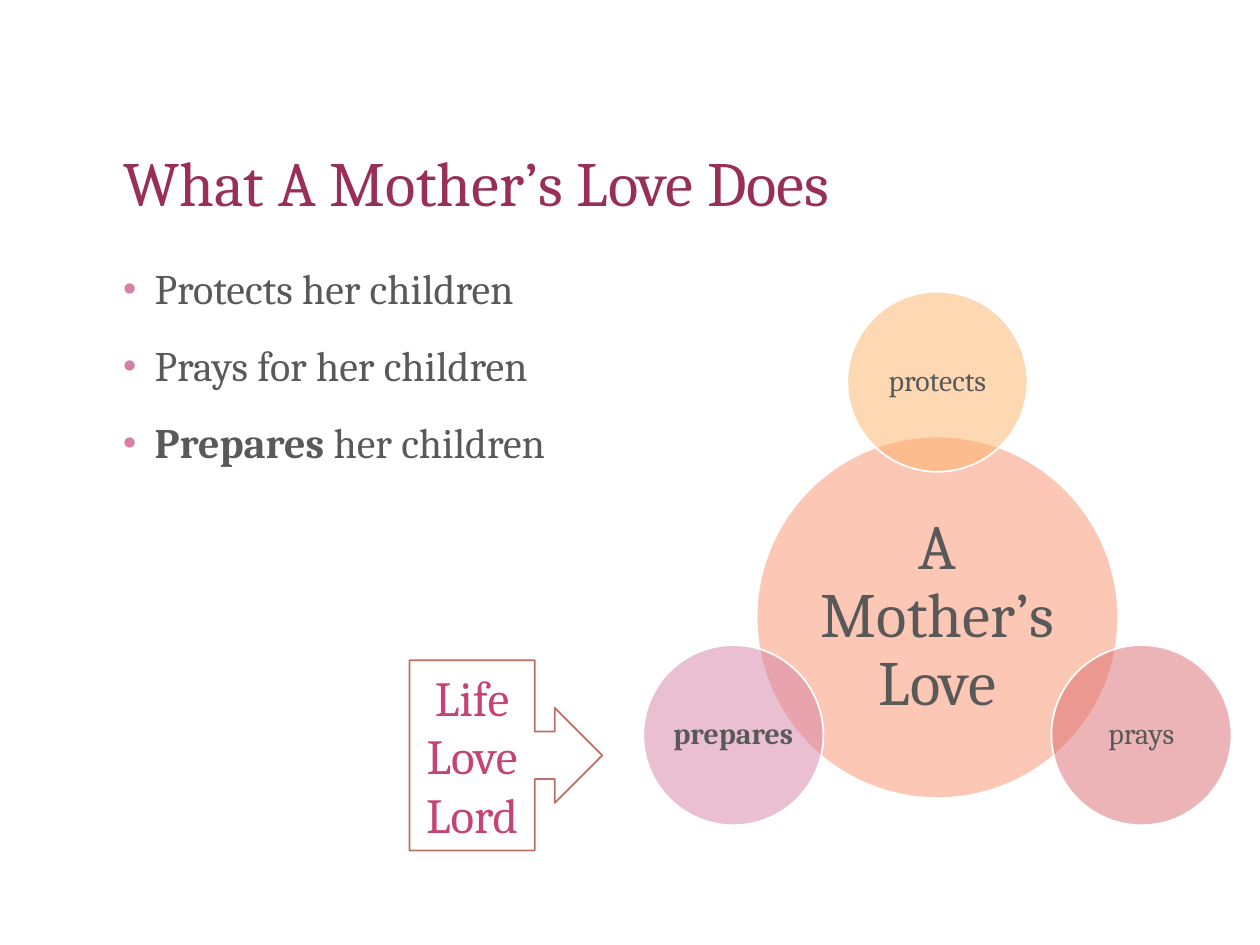
from math import cos, radians, sin

from lxml import etree
from pptx import Presentation
from pptx.dml.color import RGBColor
from pptx.enum.shapes import MSO_SHAPE
from pptx.enum.text import MSO_ANCHOR, PP_ALIGN
from pptx.oxml.ns import qn
from pptx.util import Inches, Pt

OVAL, CALLOUT = MSO_SHAPE.OVAL, MSO_SHAPE.RIGHT_ARROW_CALLOUT
TOP, MIDDLE, BOTTOM = MSO_ANCHOR.TOP, MSO_ANCHOR.MIDDLE, MSO_ANCHOR.BOTTOM
LEFT, CENTER = PP_ALIGN.LEFT, PP_ALIGN.CENTER
FONT = "Cambria"
COLORS = {
    "title": "972F57", "text": "595959", "white": "FFFFFF",
    "coral": "FA906A", "orange": "FCB268", "red": "DB6B70", "pink": "D680A5",
    "callout_line": "BA7362", "callout_text": "C44475",
}


def color(name):
    return RGBColor.from_string(COLORS[name])


def write(sp, lines, size, fill="text", align=LEFT, anchor=TOP, spacing=0.9,
          gap=0, bullet=False, inset=None, wrap=True):
    """Fill a shape with paragraphs, each a list of (text, bold) runs."""
    tf = sp.text_frame
    tf.word_wrap = wrap
    tf.vertical_anchor = anchor
    if inset is not None:
        tf.margin_left = tf.margin_right = Inches(inset)
        tf.margin_top = tf.margin_bottom = Inches(inset)
    for i, runs in enumerate(lines):
        p = tf.paragraphs[0] if i == 0 else tf.add_paragraph()
        p.alignment = align
        p.line_spacing = spacing
        p.space_before = Pt(gap if i else 0)
        if bullet:
            pPr = p._p.get_or_add_pPr()
            pPr.set("marL", str(Inches(0.25)))
            pPr.set("indent", str(-Inches(0.25)))
            clr = etree.SubElement(pPr, qn("a:buClr"))
            etree.SubElement(clr, qn("a:srgbClr"), val=COLORS["pink"])
            etree.SubElement(pPr, qn("a:buSzPct"), val="90000")
            etree.SubElement(pPr, qn("a:buFont"), typeface="Arial")
            etree.SubElement(pPr, qn("a:buChar"), char="•")
        for text, bold in runs:
            r = p.add_run()
            r.text = text
            r.font.name = FONT
            r.font.size = Pt(size)
            r.font.bold = bold
            r.font.color.rgb = color(fill)


prs = Presentation()
prs.slide_width, prs.slide_height = Inches(10), Inches(7.5)
s = prs.slides.add_slide(prs.slide_layouts[5])

# Title and bullets
title = s.shapes.title
title.left, title.top = Inches(0.88), Inches(0.5)
title.width, title.height = Inches(8.25), Inches(1.3)
write(title, [[("What A Mother’s Love Does", False)]], 36, fill="title", anchor=BOTTOM)

body = s.shapes.add_textbox(Inches(0.88), Inches(2.08), Inches(3.94), Inches(4.67))
write(body, [
    [("Protects her children", False)],
    [("Prays for her children", False)],
    [("Prepares", True), (" her children", False)],
], 24, gap=18, bullet=True)

# Radial diagram: a large circle with three small ones around it
CENTER_X, CENTER_Y, ORBIT = 7.44, 4.9, 1.87
circles = [  # text, bold, colour, diameter, orbit, angle, size, inset
    ("A Mother’s Love", False, "coral", 2.87, 0, 0, 36, 0.05),
    ("protects", False, "orange", 1.43, ORBIT, -90, 17, 0),
    ("prays", False, "red", 1.43, ORBIT, 30, 17, 0),
    ("prepares", True, "pink", 1.43, ORBIT, 150, 17, 0),
]
for text, bold, fill, d, orbit, angle, size, inset in circles:
    x = CENTER_X + orbit * cos(radians(angle)) - d / 2
    y = CENTER_Y + orbit * sin(radians(angle)) - d / 2
    sp = s.shapes.add_shape(OVAL, Inches(x), Inches(y), Inches(d), Inches(d))
    sp.shadow.inherit = False
    sp.fill.solid()
    sp.fill.fore_color.rgb = color(fill)
    srgb = sp._element.spPr.find(qn("a:solidFill")).find(qn("a:srgbClr"))
    etree.SubElement(srgb, qn("a:alpha"), val="50000")
    sp.line.color.rgb = color("white")
    sp.line.width = Pt(1)
    write(sp, [[(text, bold)]], size, align=CENTER, anchor=MIDDLE, inset=inset)

# Callout pointing at "prepares"
callout = s.shapes.add_shape(CALLOUT, Inches(3.25), Inches(5.24), Inches(1.53), Inches(1.51))
callout.shadow.inherit = False
callout.fill.solid()
callout.fill.fore_color.rgb = color("white")
callout.line.color.rgb = color("callout_line")
callout.line.width = Pt(1)
write(callout, [[(word, False)] for word in ("Life", "Love", "Lord")], 28,
      fill="callout_text", align=CENTER, anchor=MIDDLE, spacing=1.0, wrap=False)

prs.save("out.pptx")
